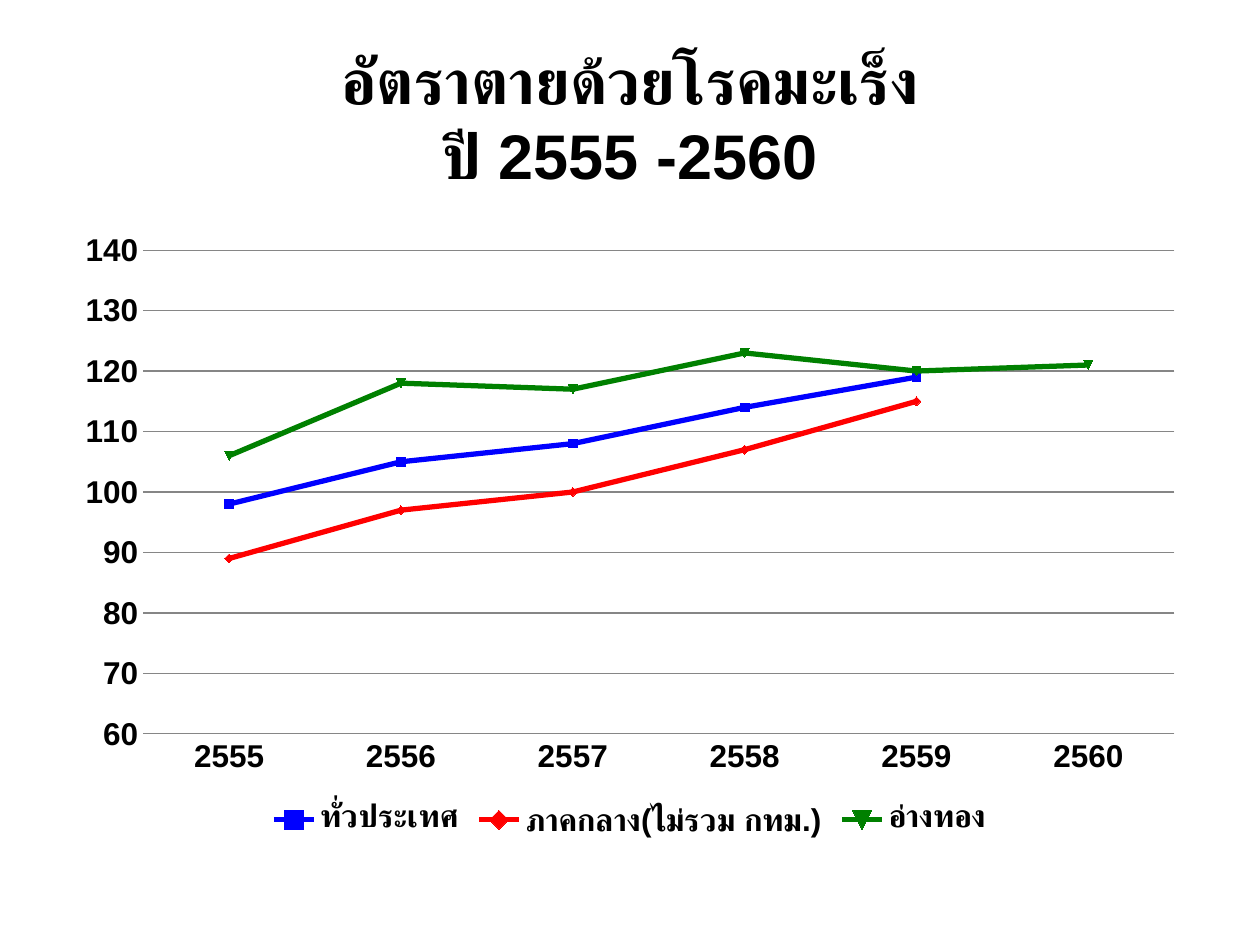
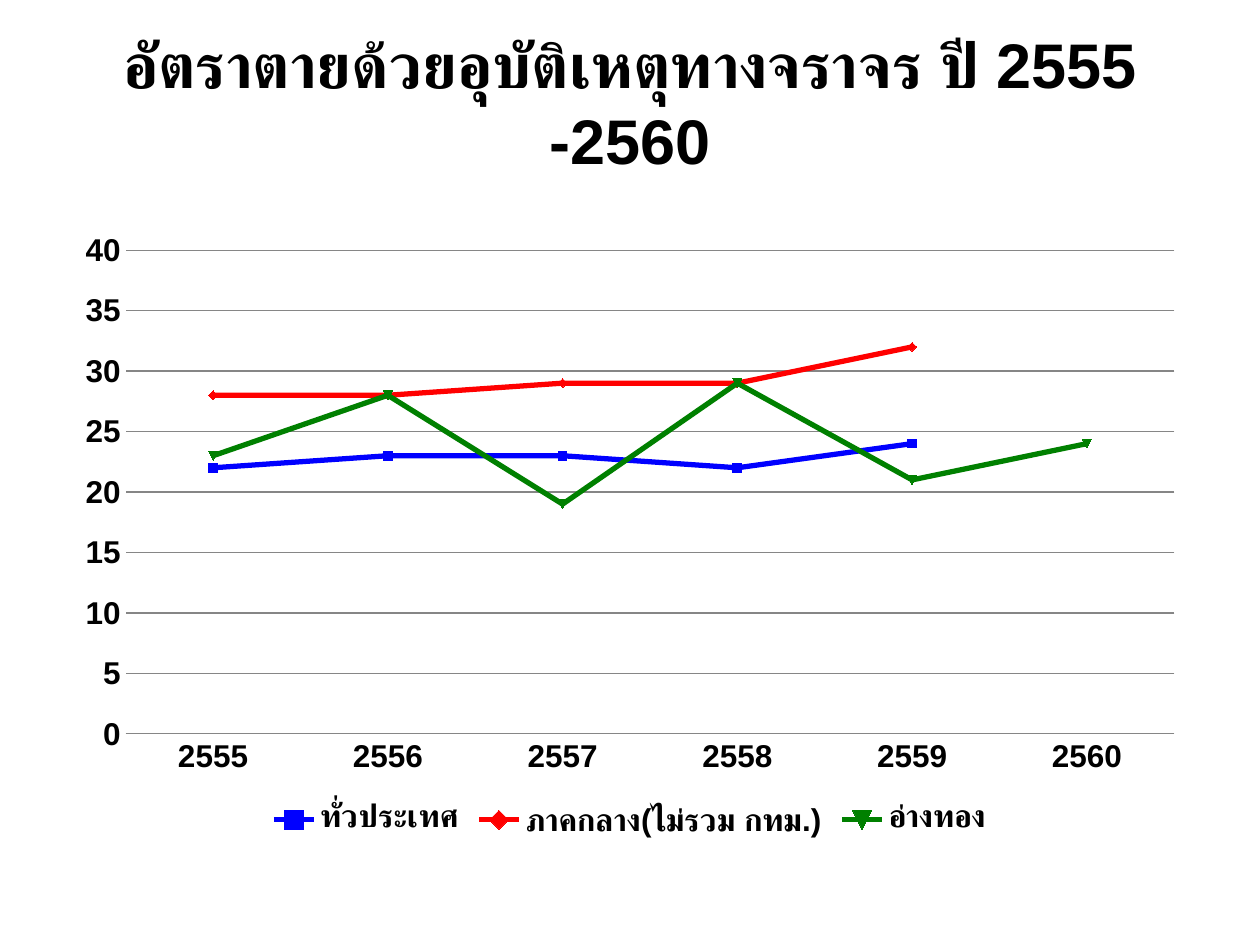
from pptx import Presentation
from pptx.chart.data import CategoryChartData
from pptx.dml.color import RGBColor
from pptx.enum.chart import XL_CHART_TYPE, XL_LEGEND_POSITION, XL_MARKER_STYLE, XL_TICK_MARK
from pptx.enum.text import MSO_ANCHOR, MSO_AUTO_SIZE, PP_ALIGN
from pptx.util import Pt

PX = 914400 // 126
WIDE, HIGH = 1260, 945
LEFT, SPAN = 63, 1134
TITLE_TOP = 38
CHART_TOP, CHART_HIGH = 220, 624
FONT, BLACK, GREY = "Arial", "000000", "868686"

YEARS = ["2555", "2556", "2557", "2558", "2559", "2560"]
AREAS = [
    ("ทั่วประเทศ", "0000FF"),
    ("ภาคกลาง(ไม่รวม กทม.)", "FF0000"),
    ("อ่างทอง", "008000"),
]
SLIDES = [
    {
        "title": "อัตราตายด้วยโรคมะเร็ง\vปี 2555 -2560",
        "high": 158,
        "scale": (60, 140, 10),
        "rates": [
            (98, 105, 108, 114, 119, None),
            (89, 97, 100, 107, 115, None),
            (106, 118, 117, 123, 120, 121),
        ],
    },
    {
        "title": "อัตราตายด้วยอุบัติเหตุทางจราจร ปี 2555 -2560",
        "high": 127,
        "scale": (0, 40, 5),
        "rates": [
            (22, 23, 23, 22, 24, None),
            (28, 28, 29, 29, 32, None),
            (23, 28, 19, 29, 21, 24),
        ],
    },
]


def color(code):
    return RGBColor.from_string(code)


def style(font, size, name=FONT, bold=True):
    font.name, font.size, font.bold = name, Pt(size), bold
    font.color.rgb = color(BLACK)


def stroke(line, code, width):
    line.color.rgb = color(code)
    line.width = Pt(width)


def place(shape, left, top, wide, high):
    shape.left, shape.top = left * PX, top * PX
    shape.width, shape.height = wide * PX, high * PX


def add_title(slide, text, high):
    title = slide.shapes.title
    place(title, LEFT, TITLE_TOP, SPAN, high)
    frame = title.text_frame
    frame.text = text
    frame.word_wrap = True
    frame.auto_size = MSO_AUTO_SIZE.NONE
    frame.vertical_anchor = MSO_ANCHOR.MIDDLE
    para = frame.paragraphs[0]
    para.alignment = PP_ALIGN.CENTER
    style(para.font, 36)


def format_axes(chart, scale):
    years, rates = chart.category_axis, chart.value_axis
    for axis in (years, rates):
        axis.major_tick_mark = axis.minor_tick_mark = XL_TICK_MARK.NONE
        style(axis.tick_labels.font, 18)
    stroke(years.format.line, GREY, 0.75)
    rates.format.line.fill.background()
    rates.minimum_scale, rates.maximum_scale, rates.major_unit = scale
    rates.has_major_gridlines = True
    stroke(rates.major_gridlines.format.line, GREY, 0.75)
    rates.tick_labels.number_format = "#,##0"
    rates.tick_labels.number_format_is_linked = False


def add_lines(slide, rates, scale):
    data = CategoryChartData()
    data.categories = YEARS
    for (name, _), row in zip(AREAS, rates):
        data.add_series(name, row)
    box = [n * PX for n in (LEFT, CHART_TOP, SPAN, CHART_HIGH)]
    chart = slide.shapes.add_chart(XL_CHART_TYPE.LINE_MARKERS, *box, data).chart
    style(chart.font, 18, "Calibri", False)
    chart.has_title = False
    chart.has_legend = True
    chart.legend.position = XL_LEGEND_POSITION.BOTTOM
    chart.legend.include_in_layout = False
    style(chart.legend.font, 18)
    format_axes(chart, scale)
    plot = chart.plots[0]
    plot.vary_by_categories = False
    for series, (_, code) in zip(plot.series, AREAS):
        series.smooth = False
        stroke(series.format.line, code, 3)
        mark = series.marker
        mark.style, mark.size = XL_MARKER_STYLE.AUTOMATIC, 5
        mark.format.fill.solid()
        mark.format.fill.fore_color.rgb = color(code)
        mark.format.line.color.rgb = color(code)


def main():
    deck = Presentation()
    deck.slide_width, deck.slide_height = WIDE * PX, HIGH * PX
    for item in SLIDES:
        slide = deck.slides.add_slide(deck.slide_layouts[5])
        add_title(slide, item["title"], item["high"])
        add_lines(slide, item["rates"], item["scale"])
    deck.save("out.pptx")


if __name__ == "__main__":
    main()
